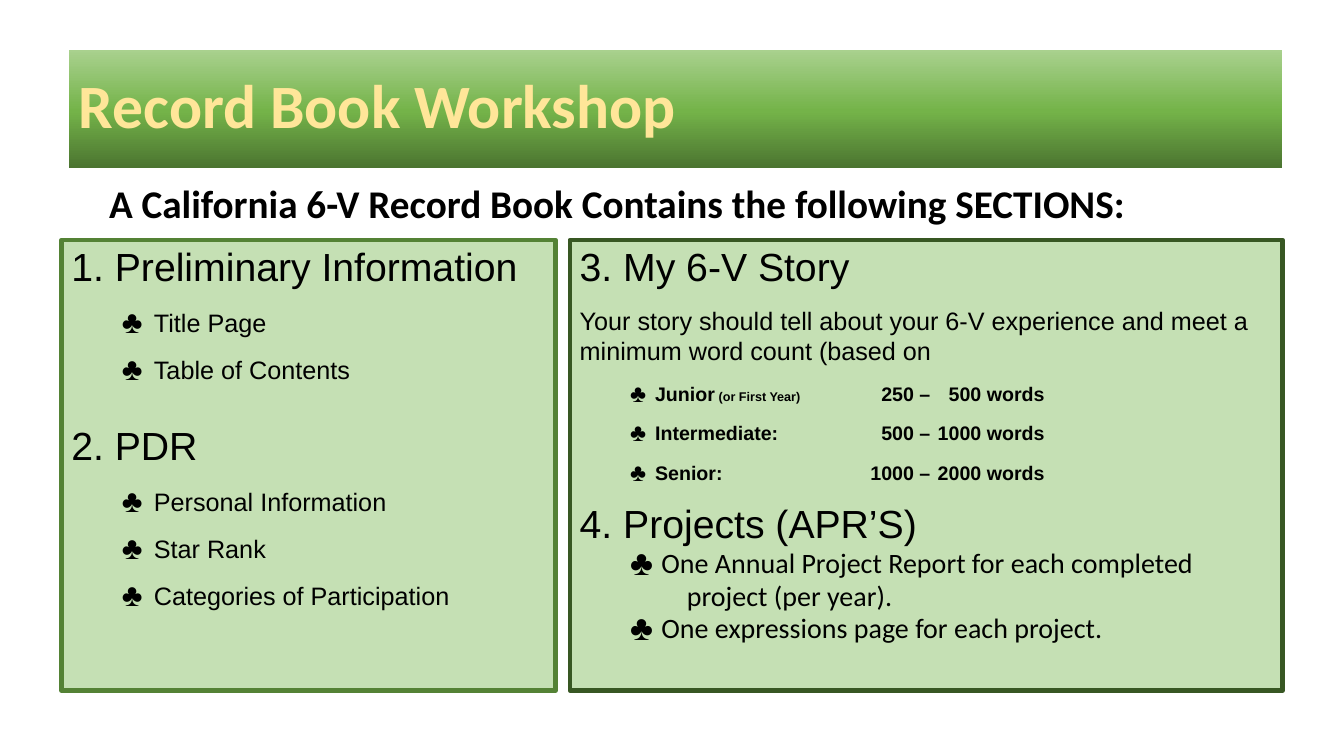
from dataclasses import dataclass

from lxml.etree import SubElement
from pptx import Presentation
from pptx.dml.color import RGBColor
from pptx.enum.shapes import MSO_SHAPE
from pptx.enum.text import MSO_ANCHOR, PP_ALIGN
from pptx.oxml.ns import qn
from pptx.util import Cm, Pt


@dataclass(frozen=True)
class Theme:
    banner_stops: tuple = ((0, "4B7430"), (48, "74B349"), (100, "A9D18E"))
    title: str = "FFE699"
    ink: str = "000000"
    panel: str = "C5E0B4"
    left_edge: str = "548235"
    right_edge: str = "385723"
    edge_width: float = 3.25
    sans: str = "Arial"
    display: str = "Calibri"
    title_size: int = 44
    heading_size: int = 28
    project_size: int = 20
    body_size: int = 18
    count_size: int = 14
    note_size: int = 9


THEME = Theme()


# Text
def add_text(para, text, size=THEME.body_size, font=THEME.sans,
             color=THEME.ink, bold=False):
    span = para.add_run()
    span.text = text
    span.font.size = Pt(size)
    span.font.name = font
    span.font.bold = bold
    span.font.color.rgb = RGBColor.from_string(color)


def add_para(frame, spacing=0.97, before=12, after=0, margin=0, hanging=0,
             bullet=False, tabs=()):
    first = frame.paragraphs[0]
    para = first if not first.runs else frame.add_paragraph()
    para.alignment = PP_ALIGN.LEFT
    para.line_spacing = spacing
    para.space_before, para.space_after = Pt(before), Pt(after)
    settings = para._p.get_or_add_pPr()
    settings.set("marL", str(Cm(margin)))
    settings.set("indent", str(-Cm(hanging)))
    if bullet:
        SubElement(settings, qn("a:buSzPct"), val="125000")
        SubElement(settings, qn("a:buFont"), typeface=THEME.sans)
        SubElement(settings, qn("a:buChar"), char="♣")
    if tabs:
        stops = SubElement(settings, qn("a:tabLst"))
        for position in tabs:
            SubElement(stops, qn("a:tab"), pos=str(Cm(position)), algn="r")
    return para


def add_heading(frame, text, before=12):
    add_text(add_para(frame, before=before), text, size=THEME.heading_size)


def add_bullets(frame, items):
    for item in items:
        para = add_para(frame, spacing=1.0, margin=2.08, hanging=0.81, bullet=True)
        add_text(para, item)


def add_word_counts(frame, levels):
    for level, note, low, high in levels:
        para = add_para(frame, margin=1.9, hanging=0.63, bullet=True,
                        tabs=(8.84, 11.72))
        add_text(para, level, size=THEME.count_size, bold=True)
        if note:
            add_text(para, f" {note}", size=THEME.note_size, bold=True)
        add_text(para, f"\t{low} –\t{high} words", size=THEME.count_size, bold=True)


def add_project_line(frame, text, margin=2.06, hanging=0.79, bullet=True):
    para = add_para(frame, before=0, margin=margin, hanging=hanging, bullet=bullet)
    add_text(para, text, size=THEME.project_size, font=THEME.display)


# Boxes
def add_box(page, left, top, width, height, anchor=MSO_ANCHOR.TOP):
    box = page.shapes.add_shape(MSO_SHAPE.RECTANGLE, Cm(left), Cm(top),
                                Cm(width), Cm(height))
    box.shadow.inherit = False
    box.fill.background()
    box.line.fill.background()
    box.text_frame.word_wrap = True
    box.text_frame.vertical_anchor = anchor
    return box


def add_banner(page, text):
    box = add_box(page, 1.74, 1.26, 30.58, 2.97, MSO_ANCHOR.MIDDLE)
    box.fill.gradient()
    box.fill.gradient_angle = 90
    stops = box._element.spPr.find(qn("a:gradFill")).find(qn("a:gsLst"))
    stops.clear()
    for percent, color in THEME.banner_stops:
        stop = SubElement(stops, qn("a:gs"), pos=str(percent * 1000))
        SubElement(stop, qn("a:srgbClr"), val=color)
    para = add_para(box.text_frame, spacing=0.9, before=0)
    add_text(para, text, size=THEME.title_size, font=THEME.display,
             color=THEME.title, bold=True)


def add_subtitle(page, text):
    box = page.shapes.add_textbox(Cm(2.5), Cm(4.43), Cm(29.03), Cm(1.4))
    box.text_frame.word_wrap = True
    box.text_frame.vertical_anchor = MSO_ANCHOR.BOTTOM
    para = add_para(box.text_frame, spacing=1.07, before=0, after=8)
    add_text(para, text, size=THEME.heading_size, font=THEME.display, bold=True)


def add_panel(page, left, width, edge):
    box = add_box(page, left, 6.05, width, 11.35)
    box.fill.solid()
    box.fill.fore_color.rgb = RGBColor.from_string(THEME.panel)
    box.line.color.rgb = RGBColor.from_string(edge)
    box.line.width = Pt(THEME.edge_width)
    return box.text_frame


def main():
    deck = Presentation()
    deck.slide_width, deck.slide_height = Cm(33.87), Cm(19.05)
    page = deck.slides.add_slide(deck.slide_layouts[6])

    add_banner(page, "Record Book Workshop")
    add_subtitle(page, "A California 6-V Record Book Contains the following SECTIONS:")

    # Sections 1 and 2
    frame = add_panel(page, 1.55, 12.45, THEME.left_edge)
    add_heading(frame, "1. Preliminary Information")
    add_bullets(frame, ["Title Page", "Table of Contents"])
    add_heading(frame, "2. PDR", before=28)
    add_bullets(frame, ["Personal Information", "Star Rank",
                        "Categories of Participation"])

    # Sections 3 and 4
    frame = add_panel(page, 14.36, 17.96, THEME.right_edge)
    add_heading(frame, "3. My 6-V Story")
    add_text(add_para(frame), "Your story should tell about your 6-V experience "
                              "and meet a minimum word count (based on")
    add_word_counts(frame, [
        ("Junior", "(or First Year)", 250, 500),
        ("Intermediate:", "", 500, 1000),
        ("Senior:", "", 1000, 2000),
    ])
    add_heading(frame, "4. Projects (APR’S)")
    add_project_line(frame, "One Annual Project Report for each completed")
    add_project_line(frame, "project (per year).", margin=2.7, hanging=0, bullet=False)
    add_project_line(frame, "One expressions page for each project.")

    deck.save("out.pptx")


if __name__ == "__main__":
    main()
